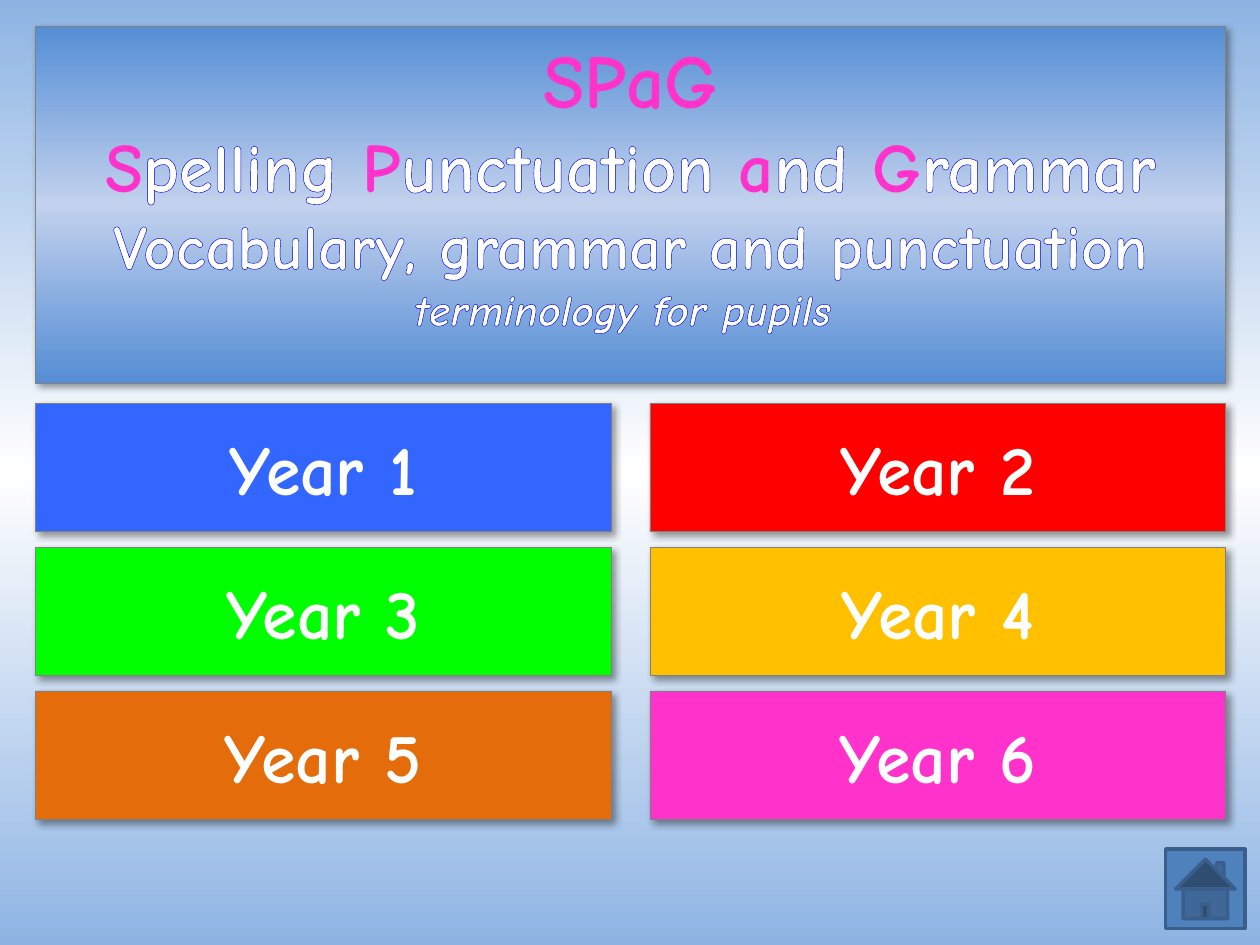
from typing import NamedTuple

from lxml import etree
from pptx import Presentation
from pptx.dml.color import RGBColor
from pptx.enum.shapes import MSO_SHAPE
from pptx.enum.text import MSO_ANCHOR, PP_ALIGN
from pptx.oxml.ns import qn
from pptx.util import Cm, Pt

RECTANGLE = MSO_SHAPE.RECTANGLE
HOME_BUTTON = MSO_SHAPE.ACTION_BUTTON_HOME
TOP, MIDDLE = MSO_ANCHOR.TOP, MSO_ANCHOR.MIDDLE
CENTER = PP_ALIGN.CENTER
FONT = "Comic Neue"

COLORS = {
    "sky": "8EB4E3",
    "white": "FFFFFF",
    "banner": "558ED5",
    "banner_light": "C2D1ED",
    "border": "808080",
    "shadow": "000000",
    "outline": "0000CC",
    "pink": "FF33CC",
    "blue": "3366FF",
    "red": "FF0000",
    "green": "00FF00",
    "amber": "FFC000",
    "orange": "E46C0A",
    "home": "4F81BD",
    "home_border": "3A5F8C",
}


class Span(NamedTuple):
    text: str
    size: float
    color: str = "white"
    italic: bool = False
    outlined: bool = True


class YearButton(NamedTuple):
    label: str
    color: str


TITLE_LINES = [
    [Span("SPaG", 43.2, "pink")],
    [
        Span("S", 39.6, "pink"), Span("pelling ", 39.6),
        Span("P", 39.6, "pink"), Span("unctuation ", 39.6),
        Span("a", 39.6, "pink"), Span("nd ", 39.6),
        Span("G", 39.6, "pink"), Span("rammar", 39.6),
    ],
    [Span("Vocabulary, grammar and punctuation", 36)],
    [Span("terminology for pupils ", 25.2, italic=True)],
]

YEAR_BUTTONS = [
    YearButton("Year 1", "blue"), YearButton("Year 2", "red"),
    YearButton("Year 3", "green"), YearButton("Year 4", "amber"),
    YearButton("Year 5", "orange"), YearButton("Year 6", "pink"),
]

LEFT, BANNER_TOP, BANNER_WIDTH, BANNER_HEIGHT = 0.71, 0.53, 24.0, 7.19
BUTTON_TOP, BUTTON_WIDTH, BUTTON_HEIGHT = 8.13, 11.61, 2.59
COLUMN_PITCH, ROW_PITCH = BANNER_WIDTH - BUTTON_WIDTH, 2.9


def rgb(name: str) -> RGBColor:
    return RGBColor.from_string(COLORS[name])


def add_color(parent, name: str):
    return etree.SubElement(parent, qn("a:srgbClr"), val=COLORS[name])


def set_mirrored_gradient(fill, owner, edge: str, center: str) -> None:
    """Run a vertical gradient from edge to center and back to edge."""
    fill.gradient()
    fill.gradient_angle = 270
    stops = owner.find(".//" + qn("a:gsLst"))
    for stop in list(stops):
        stops.remove(stop)
    for position, color in ((0, edge), (50, center), (100, edge)):
        stop = etree.SubElement(stops, qn("a:gs"), pos=str(position * 1000))
        add_color(stop, color)


def add_box(page, shape_type, left: float, top: float, width: float,
            height: float, fill: str, border: str, border_width: float):
    box = page.shapes.add_shape(
        shape_type, Cm(left), Cm(top), Cm(width), Cm(height))
    box.fill.solid()
    box.fill.fore_color.rgb = rgb(fill)
    box.line.color.rgb = rgb(border)
    box.line.width = Pt(border_width)
    box.shadow.inherit = False
    return box


def add_panel(page, left: float, top: float, width: float, height: float,
              fill: str):
    """Add a thin-bordered rectangle with a soft shadow to the lower right."""
    panel = add_box(page, RECTANGLE, left, top, width, height,
                    fill, "border", 0.25)
    effects = panel.element.spPr.find(qn("a:effectLst"))
    shadow = etree.SubElement(
        effects, qn("a:outerShdw"), blurRad=str(Pt(4)), dist=str(Pt(3)),
        dir=str(45 * 60000), algn="tl", rotWithShape="0")
    etree.SubElement(add_color(shadow, "shadow"), qn("a:alpha"), val="40000")
    return panel


def add_span(para, span: Span) -> None:
    run = para.add_run()
    run.text = span.text
    font = run.font
    font.name = FONT
    font.size = Pt(span.size)
    font.bold = True
    font.italic = span.italic
    font.color.rgb = rgb(span.color)
    if span.outlined:
        properties = run.font._element
        outline = etree.Element(qn("a:ln"), w=str(Pt(0.75)))
        add_color(etree.SubElement(outline, qn("a:solidFill")), "outline")
        properties.insert(0, outline)


def write_lines(box, lines: list[list[Span]], anchor) -> None:
    frame = box.text_frame
    frame.word_wrap = True
    frame.vertical_anchor = anchor
    para = frame.paragraphs[0]
    para.alignment = CENTER
    for number, line in enumerate(lines):
        if number:
            para.add_line_break()
        for span in line:
            add_span(para, span)


def add_banner(page) -> None:
    banner = add_panel(page, LEFT, BANNER_TOP, BANNER_WIDTH, BANNER_HEIGHT,
                       "banner")
    set_mirrored_gradient(banner.fill, banner.element, "banner",
                          "banner_light")
    write_lines(banner, TITLE_LINES, TOP)


def add_year_buttons(page) -> None:
    for index, button in enumerate(YEAR_BUTTONS):
        row, column = divmod(index, 2)
        panel = add_panel(
            page, LEFT + column * COLUMN_PITCH, BUTTON_TOP + row * ROW_PITCH,
            BUTTON_WIDTH, BUTTON_HEIGHT, button.color)
        write_lines(panel, [[Span(button.label, 40, outlined=False)]], MIDDLE)


def main() -> None:
    deck = Presentation()
    deck.slide_width, deck.slide_height = Cm(25.4), Cm(19.05)
    page = deck.slides.add_slide(deck.slide_layouts[6])
    set_mirrored_gradient(page.background.fill, page.element, "sky", "white")
    add_box(page, HOME_BUTTON, 23.5, 17.12, 1.6, 1.6,
            "home", "home_border", 2)
    add_banner(page)
    add_year_buttons(page)
    deck.save("out.pptx")


if __name__ == "__main__":
    main()
